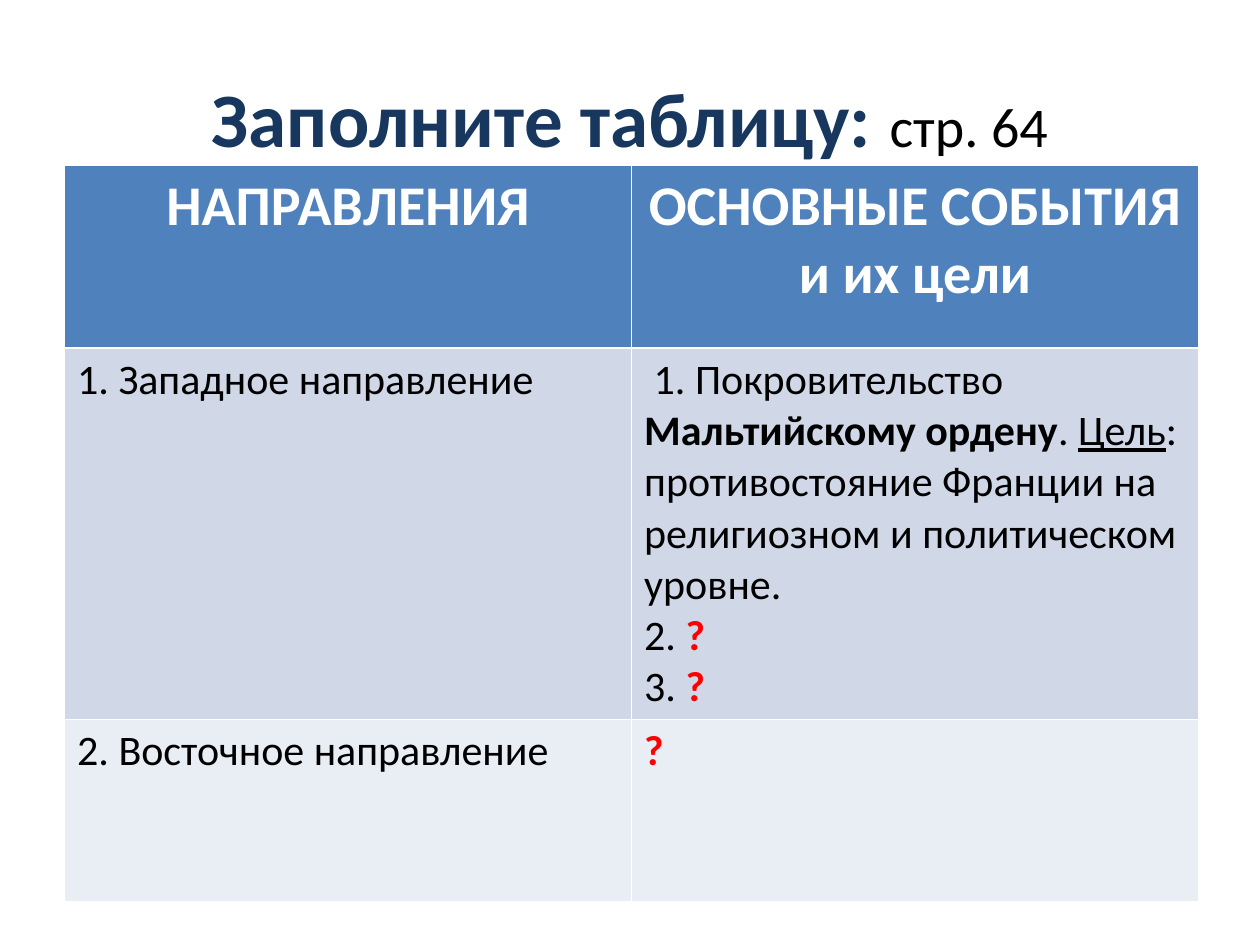
"""Build a slide with a title and a worksheet table about foreign policy directions."""
from typing import NamedTuple

from pptx import Presentation
from pptx.dml.color import RGBColor
from pptx.enum import text
from pptx.util import Pt

FONT = "Calibri"
BLACK, WHITE, RED, NAVY = "000000", "FFFFFF", "FF0000", "17375E"
BLUE, PALE_BLUE, PALE_GREY = "4F81BD", "D0D8E8", "E9EDF4"


class Piece(NamedTuple):
    """A stretch of text with one look."""
    words: str
    color: str = BLACK
    bold: bool = False
    underline: bool = False
    size: float | None = None


class Row(NamedTuple):
    """A table row: each cell is a list of paragraphs, each a list of pieces."""
    height: float
    fill: str
    size: float
    align: text.PP_ALIGN
    cells: list[list[list[Piece]]]


QUESTION = Piece("?", RED, bold=True)

TITLE = [
    Piece("Заполните таблицу: ", NAVY, bold=True, size=44),
    Piece("стр. 64", size=32),
]

ROWS = [
    Row(104.4, BLUE, 32, text.PP_ALIGN.CENTER, [
        [[Piece("НАПРАВЛЕНИЯ", WHITE, bold=True)]],
        [[Piece("ОСНОВНЫЕ СОБЫТИЯ и их цели", WHITE, bold=True)]],
    ]),
    Row(209.5, PALE_BLUE, 24, text.PP_ALIGN.LEFT, [
        [[Piece("1. Западное направление")]],
        [
            [
                Piece(" 1. Покровительство "),
                Piece("Мальтийскому ордену", bold=True),
                Piece(". "),
                Piece("Цель", underline=True),
                Piece(": противостояние Франции на религиозном "
                      "и политическом уровне."),
            ],
            [Piece("2. "), QUESTION],
            [Piece("3. "), QUESTION],
        ],
    ]),
    Row(104.4, PALE_GREY, 24, text.PP_ALIGN.LEFT, [
        [[Piece("2. Восточное направление")]],
        [[QUESTION]],
    ]),
]


def rgb(value: str) -> RGBColor:
    """Turn a hex string into a colour."""
    return RGBColor.from_string(value)


def write_paragraph(paragraph, pieces: list[Piece], align: text.PP_ALIGN) -> None:
    """Fill one paragraph with styled pieces."""
    paragraph.alignment = align
    paragraph.font.name = FONT
    for piece in pieces:
        run = paragraph.add_run()
        run.text = piece.words
        run.font.name = FONT
        run.font.bold = piece.bold
        run.font.color.rgb = rgb(piece.color)
        if piece.underline:
            run.font.underline = True
        if piece.size:
            run.font.size = Pt(piece.size)


def write_cell(cell, paragraphs: list[list[Piece]], row: Row) -> None:
    """Fill one table cell in the manner of its row."""
    cell.fill.solid()
    cell.fill.fore_color.rgb = rgb(row.fill)
    frame = cell.text_frame
    for index, pieces in enumerate(paragraphs):
        paragraph = frame.add_paragraph() if index else frame.paragraphs[0]
        sized = [piece._replace(size=row.size) for piece in pieces]
        write_paragraph(paragraph, sized, row.align)


def add_heading(slide) -> None:
    """Place and write the slide title."""
    heading = slide.shapes.title
    heading.left, heading.top = Pt(36), Pt(21.6)
    heading.width, heading.height = Pt(648), Pt(90)
    heading.text_frame.vertical_anchor = text.MSO_ANCHOR.MIDDLE
    write_paragraph(heading.text_frame.paragraphs[0], TITLE, text.PP_ALIGN.CENTER)


def add_directions(slide) -> None:
    """Add the table of directions and events."""
    height = sum(row.height for row in ROWS)
    directions = slide.shapes.add_table(
        len(ROWS), 2, Pt(36.9), Pt(94.5), Pt(648), Pt(height)).table
    for row, line in zip(ROWS, directions.rows):
        line.height = Pt(row.height)
        for paragraphs, cell in zip(row.cells, line.cells):
            write_cell(cell, paragraphs, row)


def main() -> None:
    """Build and save the presentation."""
    deck = Presentation()
    deck.slide_width, deck.slide_height = Pt(720), Pt(540)
    slide = deck.slides.add_slide(deck.slide_layouts.get_by_name("Title Only"))
    add_heading(slide)
    add_directions(slide)
    deck.save("out.pptx")


if __name__ == "__main__":
    main()
